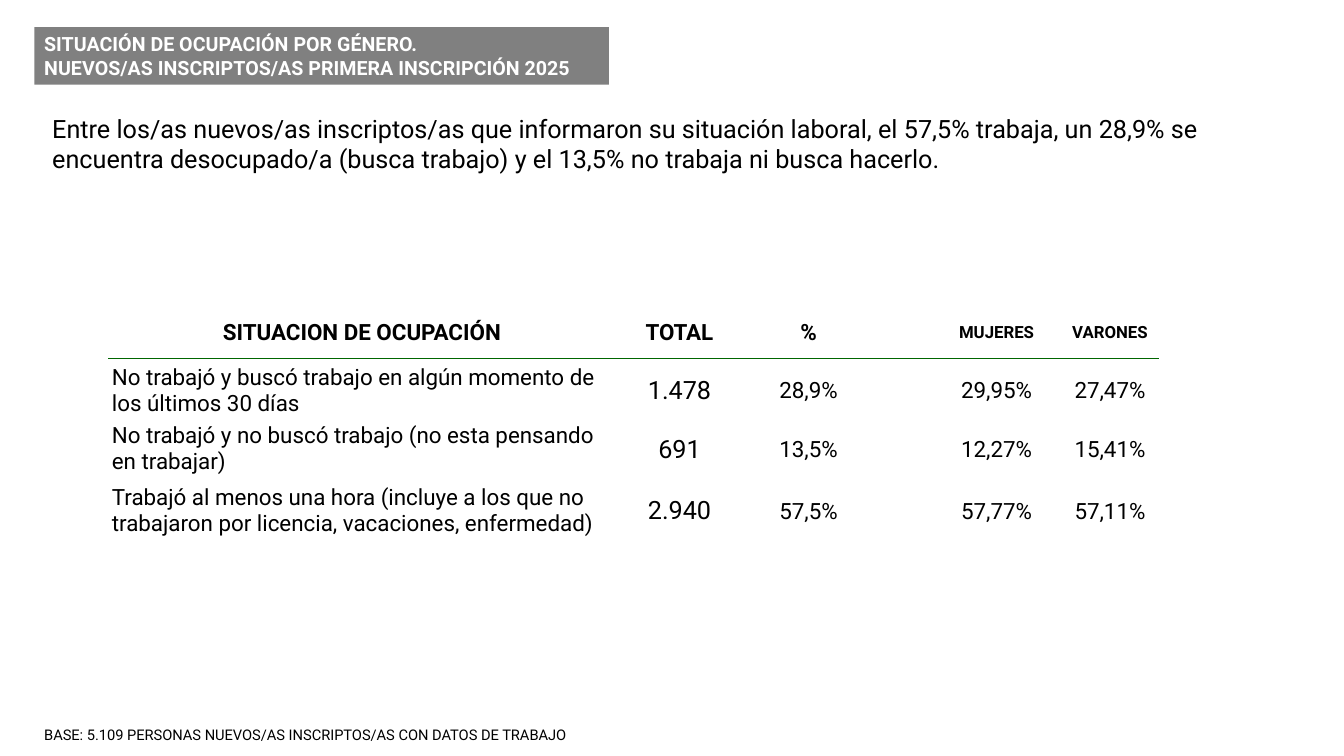
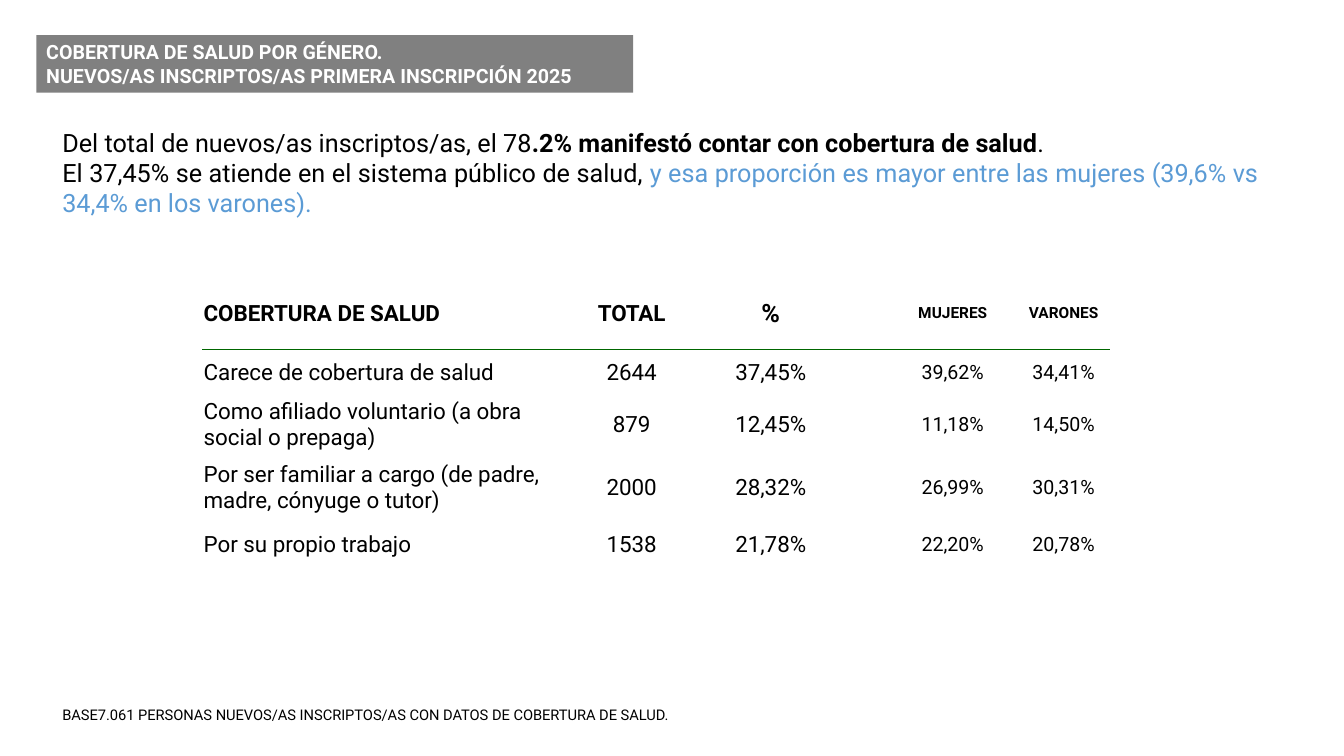
import pptx
import pptx.dml.color
import pptx.enum.shapes
import pptx.enum.text
import pptx.oxml
import pptx.oxml.ns
import pptx.util

Inches = pptx.util.Inches
Pt = pptx.util.Pt
ALIGN = pptx.enum.text.PP_ALIGN
ANCHOR = pptx.enum.text.MSO_ANCHOR

COLORS = {
    "text": "000000",
    "band": "808080",
    "band_text": "FFFFFF",
    "rule": "006600",
    "accent": "5B9BD5",
}


def rgb(name):
    return pptx.dml.color.RGBColor.from_string(COLORS[name])


class Deck:
    font = "Roboto"

    def __init__(self):
        self.prs = pptx.Presentation()
        self.prs.slide_width = Inches(13.33)
        self.prs.slide_height = Inches(7.5)
        self.s = None

    def slide(self):
        self.s = self.prs.slides.add_slide(self.prs.slide_layouts[6])

    def run(self, p, text, size, color="text", bold=False):
        r = p.add_run()
        r.text = text
        r.font.name = self.font
        r.font.size = Pt(size)
        r.font.bold = bold
        r.font.color.rgb = rgb(color)

    def fill_text(self, sp, paragraphs, size, align=ALIGN.LEFT):
        tf = sp.text_frame
        tf.word_wrap = True
        tf.auto_size = pptx.enum.text.MSO_AUTO_SIZE.SHAPE_TO_FIT_TEXT
        tf.vertical_anchor = ANCHOR.TOP
        for i, runs in enumerate(paragraphs):
            p = tf.paragraphs[0] if i == 0 else tf.add_paragraph()
            p.alignment = align
            for text, color, bold in runs:
                self.run(p, text, size, color, bold)

    def title(self, left, top, width, lines):
        sp = self.s.shapes.add_shape(
            pptx.enum.shapes.MSO_SHAPE.RECTANGLE,
            Inches(left), Inches(top), Inches(width), Inches(0.57))
        sp.shadow.inherit = False
        sp.fill.solid()
        sp.fill.fore_color.rgb = rgb("band")
        sp.line.fill.background()
        self.fill_text(sp, [[(line, "band_text", True)] for line in lines], 14)

    def text(self, left, top, width, height, paragraphs, size=18, align=ALIGN.LEFT):
        sp = self.s.shapes.add_textbox(
            Inches(left), Inches(top), Inches(width), Inches(height))
        self.fill_text(sp, paragraphs, size, align)

    def base(self, left, top, text):
        self.text(left, top, 7.17, 0.28, [[(text, "text", False)]], 10.5)

    def border(self, cell, side):
        ln = pptx.oxml.parse_xml(
            f'<a:{side} {pptx.oxml.ns.nsdecls("a")} w="12700"><a:solidFill>'
            f'<a:srgbClr val="{COLORS["rule"]}"/></a:solidFill></a:{side}>')
        cell._tc.get_or_add_tcPr().insert(0, ln)

    def cell(self, cell, text, size, bold, align, margins):
        cell.fill.background()
        cell.vertical_anchor = ANCHOR.MIDDLE
        side, top = margins
        cell.margin_left = cell.margin_right = Inches(side)
        cell.margin_top, cell.margin_bottom = Inches(top), Inches(0)
        p = cell.text_frame.paragraphs[0]
        p.alignment = align
        if text:
            self.run(p, text, size, bold=bold)

    def table(self, left, top, widths, heights, rows, head_sizes, body_sizes,
              head_align=ALIGN.LEFT, label_margins=(0.01, 0.01)):
        tb = self.s.shapes.add_table(
            len(rows), len(widths), Inches(left), Inches(top),
            Inches(sum(widths)), Inches(sum(heights))).table
        tb.first_row = tb.horz_banding = False
        for column, width in zip(tb.columns, widths):
            column.width = Inches(width)
        for row, height in zip(tb.rows, heights):
            row.height = Inches(height)
        for i, values in enumerate(rows):
            head = i == 0
            sizes = head_sizes if head else body_sizes
            for j, (text, size) in enumerate(zip(values, sizes)):
                cell = tb.cell(i, j)
                align = ALIGN.CENTER if j else head_align if head else ALIGN.LEFT
                margins = (0.01, 0.01) if head or j else label_margins
                self.cell(cell, text, size, head, align, margins)
                if i < 2:
                    self.border(cell, "lnB" if head else "lnT")


def occupation(deck):
    deck.slide()
    deck.title(0.34, 0.27, 5.7, [
        "SITUACIÓN DE OCUPACIÓN POR GÉNERO.",
        "NUEVOS/AS INSCRIPTOS/AS PRIMERA INSCRIPCIÓN 2025"])
    deck.table(
        1.08, 3.04,
        [5.02, 1.28, 1.28, 0.58, 1.29, 0.96],
        [0.52, 0.63, 0.53, 0.69],
        [
            ["SITUACION DE OCUPACIÓN", "TOTAL", "%", "", "MUJERES", "VARONES"],
            ["No trabajó y buscó trabajo en algún momento de los últimos 30 días",
             "1.478", "28,9%", "", "29,95%", "27,47%"],
            ["No trabajó y no buscó trabajo (no esta pensando en trabajar)",
             "691", "13,5%", "", "12,27%", "15,41%"],
            ["Trabajó al menos una hora (incluye a los que no trabajaron por "
             "licencia, vacaciones, enfermedad)",
             "2.940", "57,5%", "", "57,77%", "57,11%"],
        ],
        head_sizes=[16, 16, 16, 16, 12, 12],
        body_sizes=[16, 18, 16, 16, 16, 16],
        head_align=ALIGN.CENTER, label_margins=(0.03, 0))
    deck.text(0.42, 1.07, 12.34, 0.71, [[(
        "Entre los/as nuevos/as inscriptos/as que informaron su situación laboral, "
        "el 57,5% trabaja, un 28,9% se encuentra desocupado/a (busca trabajo) "
        "y el 13,5% no trabaja ni busca hacerlo.", "text", False)]])
    deck.base(0.34, 7.15,
              "BASE: 5.109 PERSONAS NUEVOS/AS INSCRIPTOS/AS CON DATOS DE TRABAJO")


def health(deck):
    deck.slide()
    deck.table(
        2.01, 2.74,
        [3.65, 1.21, 1.55, 0.38, 1.3, 0.9],
        [0.73, 0.44, 0.6, 0.65, 0.48],
        [
            ["COBERTURA DE SALUD", "TOTAL", "%", "", "MUJERES", "VARONES"],
            ["Carece de cobertura de salud",
             "2644", "37,45%", "", "39,62%", "34,41%"],
            ["Como afiliado voluntario (a obra social o prepaga)",
             "879", "12,45%", "", "11,18%", "14,50%"],
            ["Por ser familiar a cargo (de padre, madre, cónyuge o tutor)",
             "2000", "28,32%", "", "26,99%", "30,31%"],
            ["Por su propio trabajo",
             "1538", "21,78%", "", "22,20%", "20,78%"],
        ],
        head_sizes=[16, 16, 18, 16, 11, 11],
        body_sizes=[16, 16, 16, 16, 14, 14])
    deck.title(0.36, 0.35, 5.92, [
        "COBERTURA DE SALUD POR GÉNERO.",
        "NUEVOS/AS INSCRIPTOS/AS PRIMERA INSCRIPCIÓN 2025"])
    deck.text(0.52, 1.21, 12.06, 1.01, [
        [("Del total de nuevos/as inscriptos/as, el 78", "text", False),
         (".2% manifestó contar con cobertura de salud", "text", True),
         (".", "text", False)],
        [("El 37,45% se atiende en el sistema público de salud, ", "text", False),
         ("y esa proporción es mayor entre las mujeres (39,6% vs 34,4% en los "
          "varones).", "accent", False)],
    ], align=ALIGN.JUSTIFY)
    deck.base(0.52, 6.95, "BASE7.061 PERSONAS NUEVOS/AS INSCRIPTOS/AS CON DATOS "
                          "DE COBERTURA DE SALUD.")


def main():
    deck = Deck()
    occupation(deck)
    health(deck)
    deck.prs.save("out.pptx")


if __name__ == "__main__":
    main()
